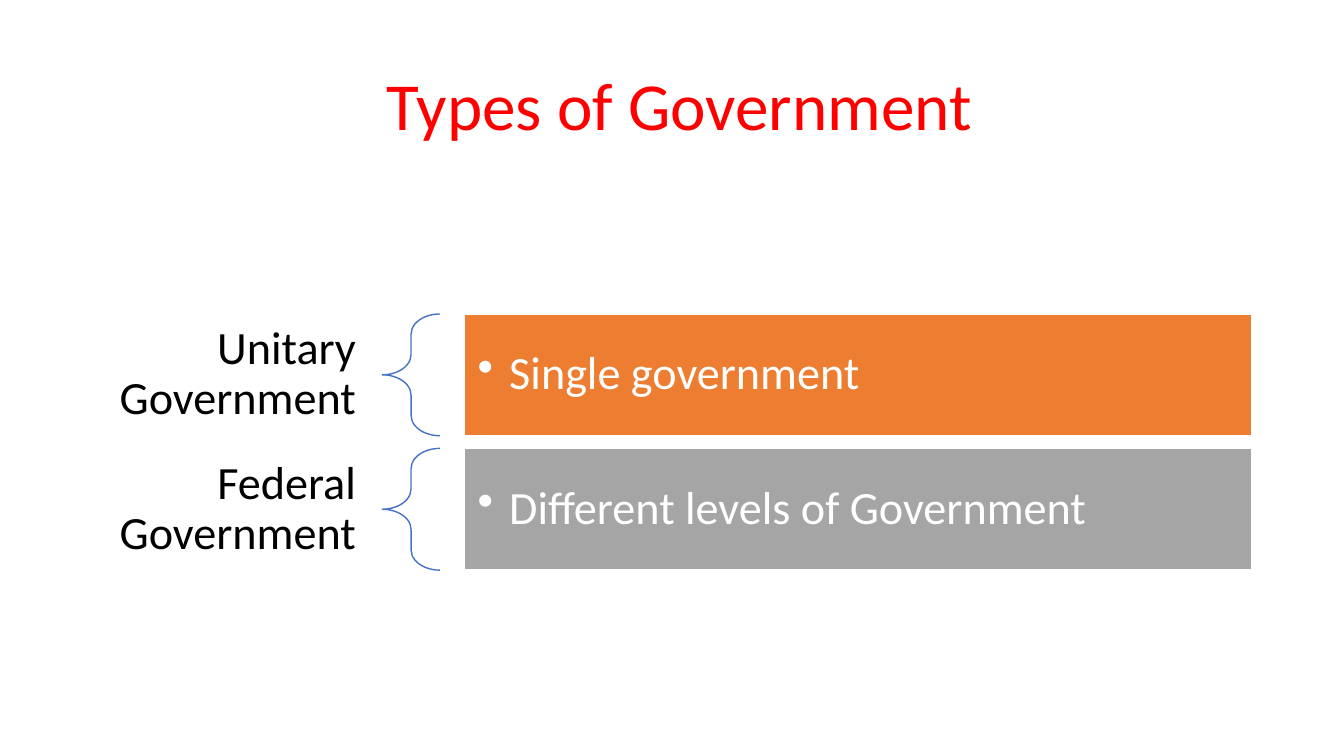
from dataclasses import dataclass

from lxml.etree import SubElement
from pptx import Presentation
from pptx.dml.color import RGBColor as RGB
from pptx.enum.shapes import MSO_SHAPE as Shape
from pptx.enum.text import MSO_ANCHOR as Anchor, PP_ALIGN as Align
from pptx.oxml.ns import qn
from pptx.util import Pt

PX = 9525  # EMU in one px, 96 px to the inch


@dataclass(frozen=True)
class Theme:
    font: str = "Calibri"
    red: str = "FF0000"
    black: str = "000000"
    white: str = "FFFFFF"
    blue: str = "4472C4"
    orange: str = "ED7D31"
    gray: str = "A5A5A5"
    head: int = 48
    body: int = 33


THEME = Theme()
LEFT, TOP, HIGH, STEP = 88, 299, 116, 128
LABEL_W, BRACE_W, GAP, BAR_W = 276, 55, 23, 750
INDENT = 30
ROWS = (
    ("Unitary Government", "Single government", THEME.orange),
    ("Federal Government", "Different levels of Government", THEME.gray),
)


def scale(*sizes):
    return [size * PX for size in sizes]


def write(shape, text, *, size, color, align=Align.LEFT, pad=(10, 5), bullet=False):
    """Fill a shape with one paragraph; pad is the side and the top inset."""
    frame = shape.text_frame
    frame.word_wrap = True
    frame.vertical_anchor = Anchor.MIDDLE
    side, edge = scale(*pad)
    frame.margin_left = frame.margin_right = side
    frame.margin_top = frame.margin_bottom = edge
    para = frame.paragraphs[0]
    para.alignment = align
    para.line_spacing = 0.9
    run = para.add_run()
    run.text = text
    font = run.font
    font.name, font.size = THEME.font, Pt(size)
    font.color.rgb = RGB.from_string(color)
    if bullet:
        para.level = 1
        props = para._p.get_or_add_pPr()
        props.set("marL", str(INDENT * PX))
        props.set("indent", str(-INDENT * PX))
        SubElement(props, qn("a:buChar"), char="•")


def add_text(slide, box, text, **style):
    write(slide.shapes.add_textbox(*scale(*box)), text, **style)


def add_form(slide, kind, box, line, fill=None):
    form = slide.shapes.add_shape(kind, *scale(*box))
    form.shadow.inherit = False
    form.line.color.rgb = RGB.from_string(line)
    form.line.width = Pt(1)
    if fill:
        form.fill.solid()
        form.fill.fore_color.rgb = RGB.from_string(fill)
    else:
        form.fill.background()
    return form


def add_row(slide, top, label, text, fill):
    """Draw a label, its brace and its coloured bar."""
    add_text(slide, (LEFT, top, LABEL_W, HIGH), label, size=THEME.body,
             color=THEME.black, align=Align.RIGHT, pad=(25, 9))
    left = LEFT + LABEL_W
    brace = add_form(slide, Shape.LEFT_BRACE, (left, top, BRACE_W, HIGH), THEME.blue)
    brace.adjustments[0] = 0.35
    left += BRACE_W + GAP
    bar = add_form(slide, Shape.RECTANGLE, (left, top, BAR_W, HIGH), THEME.white, fill)
    write(bar, text, size=THEME.body, color=THEME.white, pad=(13, 13), bullet=True)


def main():
    deck = Presentation()
    deck.slide_width, deck.slide_height = scale(1280, 720)
    slide = deck.slides.add_slide(deck.slide_layouts[6])
    add_text(slide, (LEFT, 38, 1104, 132), " Types of Government",
             size=THEME.head, color=THEME.red, align=Align.CENTER)
    for index, row in enumerate(ROWS):
        add_row(slide, TOP + index * STEP, *row)
    deck.save("out.pptx")


if __name__ == "__main__":
    main()
